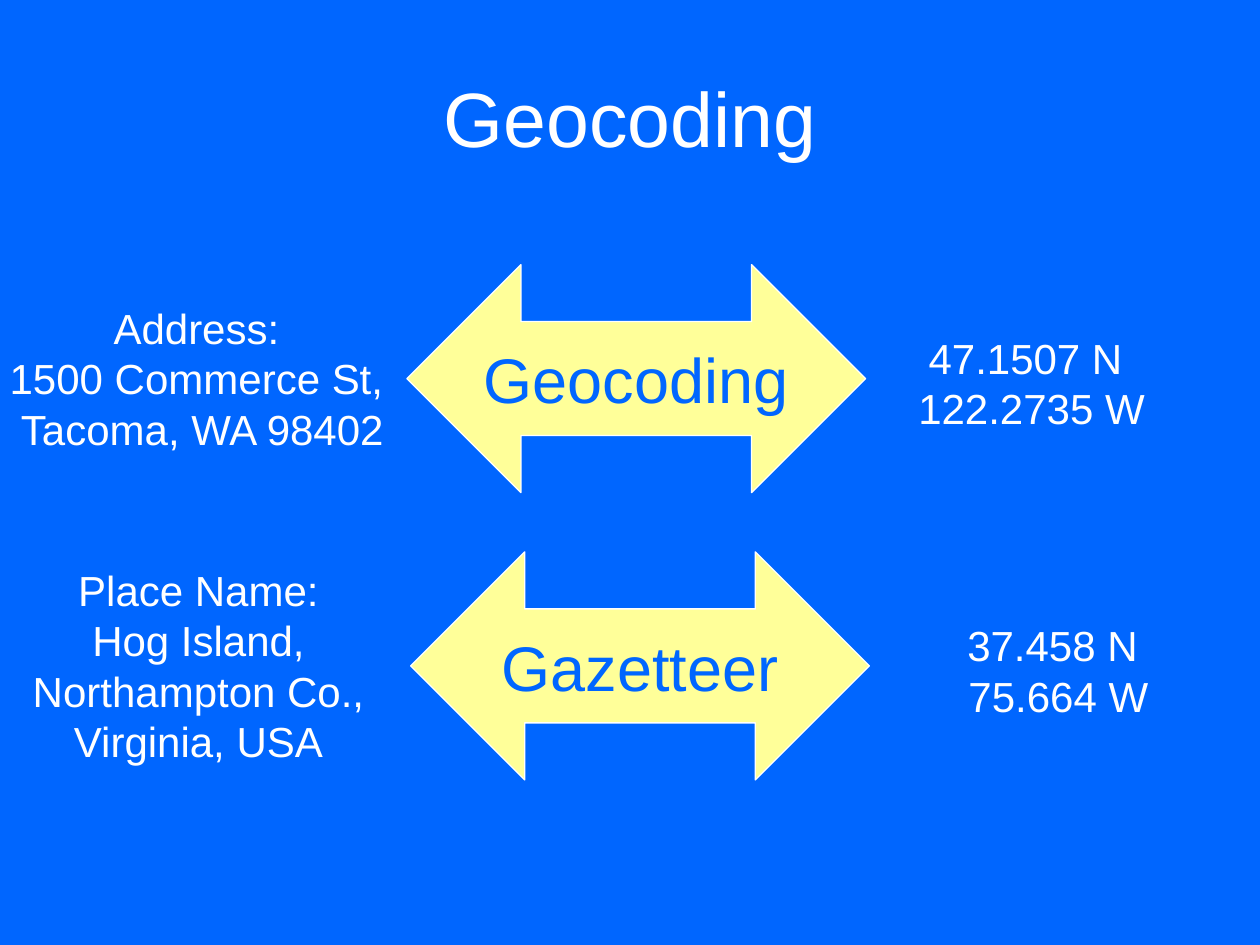
from pptx import Presentation
from pptx.dml.color import RGBColor
from pptx.enum import shapes, text
from pptx.util import Inches, Pt

COLORS = {"background": "0066FF", "text": "FFFFFF", "arrow": "FFFF99"}
CENTER, LEFT = text.PP_ALIGN.CENTER, text.PP_ALIGN.LEFT


def color(name):
    return RGBColor.from_string(COLORS[name])


class SlideBuilder:
    font_name = "Arial"

    def __init__(self, presentation):
        self.slide = presentation.slides.add_slide(presentation.slide_layouts[6])
        self.target = self.slide.shapes
        fill = self.slide.background.fill
        fill.solid()
        fill.fore_color.rgb = color("background")

    def start_group(self):
        self.target = self.slide.shapes.add_group_shape().shapes

    def set_text(self, shape, lines, size, color_name, wrap, aligns=None):
        frame = shape.text_frame
        frame.word_wrap = wrap
        frame.text = "\n".join(lines)
        for paragraph, align in zip(frame.paragraphs, aligns or [CENTER] * len(lines)):
            paragraph.alignment = align
            for run in paragraph.runs:
                run.font.name = self.font_name
                run.font.size = Pt(size)
                run.font.color.rgb = color(color_name)
        return frame

    def title(self, title):
        box = self.target.add_textbox(Inches(0.5), Inches(0.3), Inches(9), Inches(1.25))
        frame = self.set_text(box, [title], 44, "text", True)
        frame.vertical_anchor = text.MSO_ANCHOR.MIDDLE

    def label(self, left, top, width, height, lines, wrap=True, aligns=None):
        box = self.target.add_textbox(Inches(left), Inches(top), Inches(width), Inches(height))
        frame = self.set_text(box, lines, 24, "text", wrap, aligns)
        frame.auto_size = text.MSO_AUTO_SIZE.SHAPE_TO_FIT_TEXT

    def arrow(self, left, top, caption):
        shape = self.target.add_shape(
            shapes.MSO_SHAPE.LEFT_RIGHT_ARROW,
            Inches(left), Inches(top), Inches(3.64), Inches(1.81),
        )
        shape.shadow.inherit = False
        shape.fill.solid()
        shape.fill.fore_color.rgb = color("arrow")
        shape.line.color.rgb = color("text")
        shape.line.width = Pt(0.75)
        frame = self.set_text(shape, [caption], 36, "background", False)
        frame.vertical_anchor = text.MSO_ANCHOR.MIDDLE


def main():
    presentation = Presentation()
    presentation.slide_width = Inches(10)
    presentation.slide_height = Inches(7.5)
    builder = SlideBuilder(presentation)

    builder.title("Geocoding")
    builder.arrow(3.23, 2.1, "Geocoding")
    builder.label(-0.04, 2.35, 3.29, 1.31,
                  ["Address: ", "1500 Commerce St, ", "Tacoma, WA 98402"], wrap=False)
    builder.label(7.19, 2.59, 2.36, 0.91,
                  ["47.1507 N\t", "122.2735 W"], aligns=[CENTER, LEFT])

    builder.start_group()
    builder.arrow(3.26, 4.38, "Gazetteer")
    builder.label(-0.12, 4.43, 3.39, 1.72,
                  ["Place Name:", "Hog Island, Northampton Co., Virginia, USA"])
    builder.label(7.22, 4.87, 2.36, 0.91, ["37.458 N ", "75.664 W"])

    presentation.save("out.pptx")


if __name__ == "__main__":
    main()
